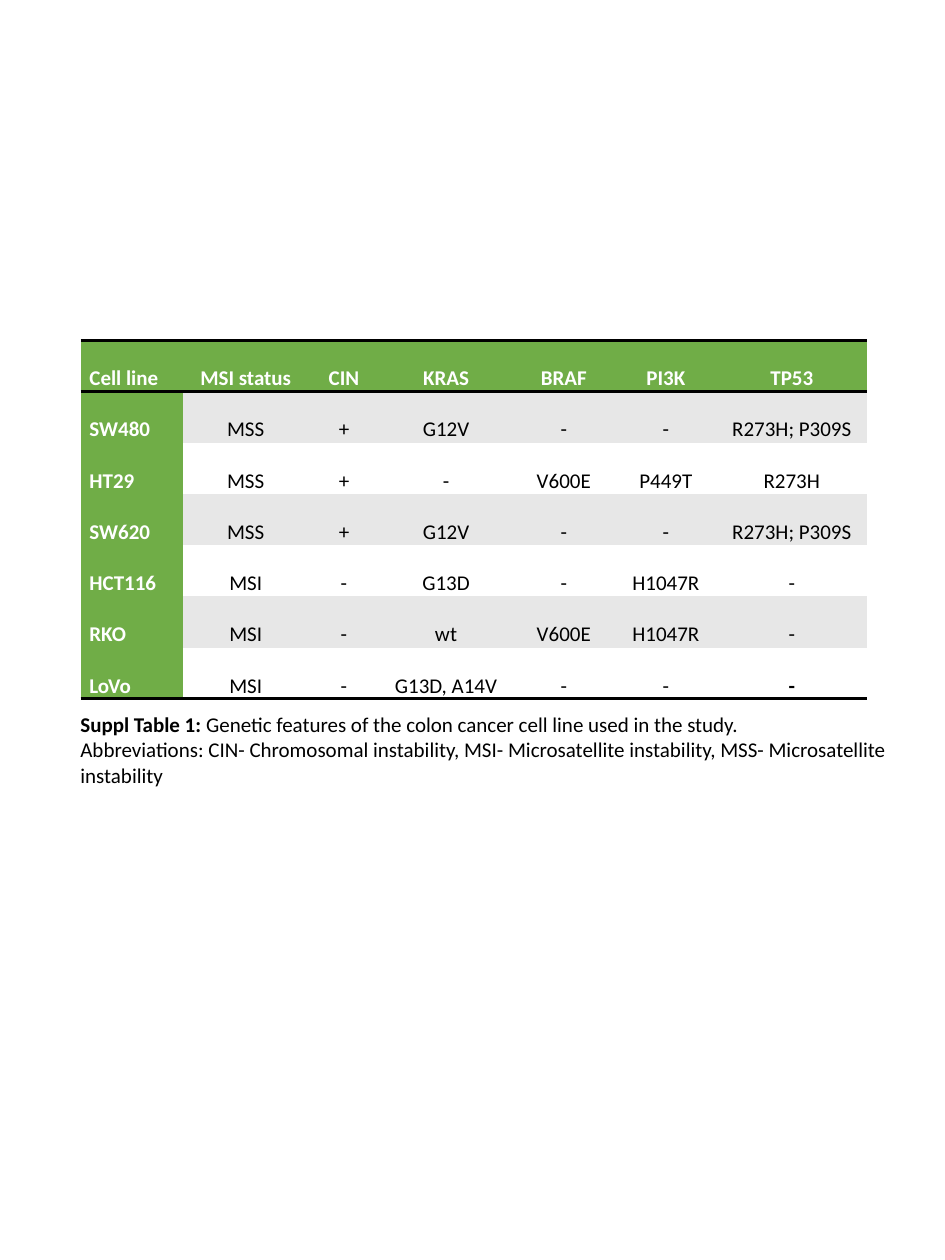
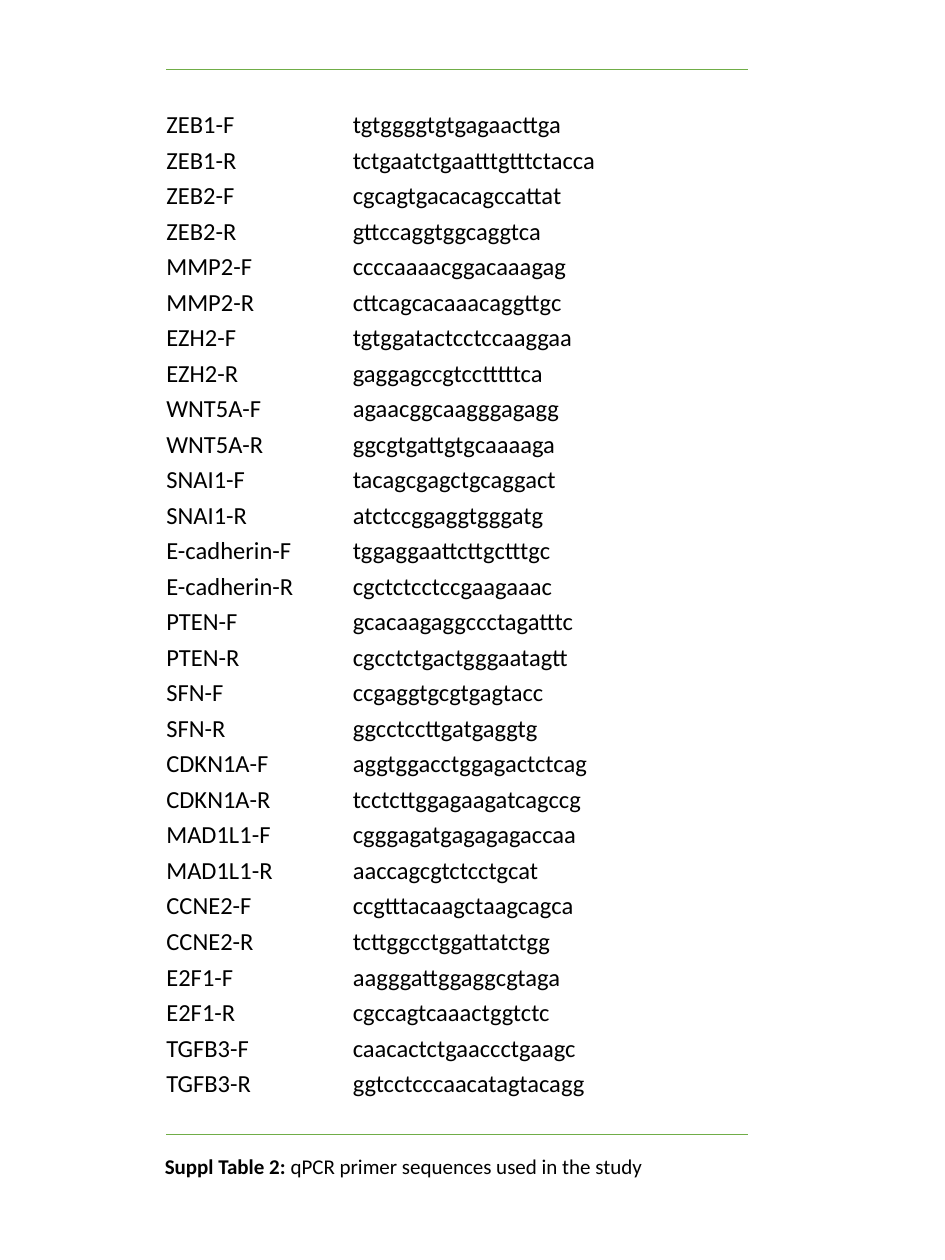
from dataclasses import dataclass

from lxml.etree import SubElement
from pptx import Presentation
from pptx.dml.color import RGBColor
from pptx.enum.text import MSO_ANCHOR as Anchor, MSO_AUTO_SIZE as AutoSize, PP_ALIGN as Align
from pptx.oxml.ns import qn
from pptx.util import Inches, Pt


@dataclass(frozen=True)
class Theme:
    font: str = "Calibri"
    green: str = "70AD47"
    band: str = "E7E7E7"
    white: str = "FFFFFF"
    black: str = "000000"
    text_size: int = 12
    primer_size: int = 14
    plain_table: str = "{2D5ABB26-0587-4C30-8999-92F81FD0307C}"


THEME = Theme()

FEATURES = [
    ["Cell line", "MSI status", "CIN", "KRAS", "BRAF", "PI3K", "TP53"],
    ["SW480", "MSS", "+", "G12V", "-", "-", "R273H; P309S"],
    ["HT29", "MSS", "+", "-", "V600E", "P449T", "R273H"],
    ["SW620", "MSS", "+", "G12V", "-", "-", "R273H; P309S"],
    ["HCT116", "MSI", "-", "G13D", "-", "H1047R", "-"],
    ["RKO", "MSI", "-", "wt", "V600E", "H1047R", "-"],
    ["LoVo", "MSI", "-", "G13D, A14V", "-", "-", "-"],
]
FEATURE_WIDTHS = [0.81, 1, 0.56, 1.06, 0.81, 0.81, 1.19]

# Gene, forward primer, reverse primer
PRIMERS = [
    ("ZEB1", "tgtggggtgtgagaacttga", "tctgaatctgaatttgtttctacca"),
    ("ZEB2", "cgcagtgacacagccattat", "gttccaggtggcaggtca"),
    ("MMP2", "ccccaaaacggacaaagag", "cttcagcacaaacaggttgc"),
    ("EZH2", "tgtggatactcctccaaggaa", "gaggagccgtcctttttca"),
    ("WNT5A", "agaacggcaagggagagg", "ggcgtgattgtgcaaaaga"),
    ("SNAI1", "tacagcgagctgcaggact", "atctccggaggtgggatg"),
    ("E-cadherin", "tggaggaattcttgctttgc", "cgctctcctccgaagaaac"),
    ("PTEN", "gcacaagaggccctagatttc", "cgcctctgactgggaatagtt"),
    ("SFN", "ccgaggtgcgtgagtacc", "ggcctccttgatgaggtg"),
    ("CDKN1A", "aggtggacctggagactctcag", "tcctcttggagaagatcagccg"),
    ("MAD1L1", "cgggagatgagagagaccaa", "aaccagcgtctcctgcat"),
    ("CCNE2", "ccgtttacaagctaagcagca", "tcttggcctggattatctgg"),
    ("E2F1", "aagggattggaggcgtaga", "cgccagtcaaactggtctc"),
    ("TGFB3", "caacactctgaaccctgaagc", "ggtcctcccaacatagtacagg"),
]
PRIMER_WIDTHS = [1.48, 3.14]

CAPTIONS = [
    (0.54, 5.6, 6.63, 0.71, "Suppl Table 1: ",
     "Genetic features of the colon cancer cell line used in the study.",
     ["Abbreviations: CIN- Chromosomal instability, MSI- Microsatellite instability, "
      "MSS- Microsatellite instability"]),
    (1.21, 9.11, 5.36, 0.3, "Suppl Table 2: ", "qPCR primer sequences used in the study", []),
]


def write(para, text, size=THEME.text_size, color=THEME.black, bold=False, align=None, spacing=None):
    """Add one formatted span; empty text only sets the height of the line."""
    para.alignment = align
    para.line_spacing = spacing
    if not text:
        SubElement(para._p, qn("a:endParaRPr"), sz=str(size * 100))
        return
    span = para.add_run()
    span.text = text
    span.font.name = THEME.font
    span.font.size = Pt(size)
    span.font.bold = bold
    span.font.color.rgb = RGBColor.from_string(color)


def rule(cell, side, color, width):
    """Draw a border on side T or B; call before the cell is filled."""
    line = SubElement(cell._tc.get_or_add_tcPr(), qn(f"a:ln{side}"), w=str(Pt(width)))
    fill = SubElement(line, qn("a:solidFill"))
    SubElement(fill, qn("a:srgbClr"), val=color)


deck = Presentation()
deck.slide_width, deck.slide_height = Inches(7.5), Inches(10)

primer_rows = [["", ""]]
for gene, forward, reverse in PRIMERS:
    primer_rows += [[f"{gene}-F", forward], [f"{gene}-R", reverse]]
primer_rows.append(["", ""])

# Pages, empty tables and captions
tables = []
for (left, top, height, widths, rows), caption in zip(
    [(0.64, 2.7, 2.8, FEATURE_WIDTHS, FEATURES), (1.32, 0.55, 8.46, PRIMER_WIDTHS, primer_rows)],
    CAPTIONS,
):
    page = deck.slides.add_slide(deck.slide_layouts[6])
    frame = page.shapes.add_table(
        len(rows), len(widths), Inches(left), Inches(top), Inches(sum(widths)), Inches(height))
    frame._element.find(f".//{qn('a:tableStyleId')}").text = THEME.plain_table
    table = frame.table
    table.first_row = table.horz_banding = False
    for column, width in zip(table.columns, widths):
        column.width = Inches(width)
    tables.append(table)

    *place, label, statement, notes = caption
    box = page.shapes.add_textbox(*map(Inches, place))
    box.text_frame.word_wrap = True
    box.text_frame.auto_size = AutoSize.SHAPE_TO_FIT_TEXT
    para = box.text_frame.paragraphs[0]
    write(para, label, bold=True)
    write(para, statement)
    for note in notes:
        write(box.text_frame.add_paragraph(), note)

features, primers = tables

# Cell line features
last = len(FEATURES) - 1
for r, row in enumerate(FEATURES):
    for c, text in enumerate(row):
        cell = features.cell(r, c)
        heading = r == 0 or c == 0
        cell.margin_left = cell.margin_right = Inches(0.07)
        cell.margin_top = cell.margin_bottom = 0
        if r == 0:
            rule(cell, "T", THEME.black, 2)
        if r in (0, last):
            rule(cell, "B", THEME.black, 2)
        cell.fill.solid()
        cell.fill.fore_color.rgb = RGBColor.from_string(
            THEME.green if heading else THEME.band if r % 2 else THEME.white)
        align = Align.CENTER if c else Align.JUSTIFY if r else Align.LEFT
        write(cell.text_frame.paragraphs[0], text, align=align, spacing=2.0,
              color=THEME.white if heading else THEME.black,
              bold=heading or (r == last and c == len(row) - 1))

# Primer sequences
last = len(primer_rows) - 1
primers.cell(0, 0).merge(primers.cell(0, 1))
for r, row in enumerate(primer_rows):
    primers.rows[r].height = Inches(8.18 / last if r else 0.28)
    for c, text in enumerate(row):
        cell = primers.cell(r, c)
        cell.margin_left = cell.margin_right = cell.margin_top = cell.margin_bottom = 0
        cell.vertical_anchor = Anchor.BOTTOM
        if r in (0, last):
            rule(cell, "B" if r else "T", THEME.green, 1)
        write(cell.text_frame.paragraphs[0], text, size=THEME.primer_size)

deck.save("out.pptx")
